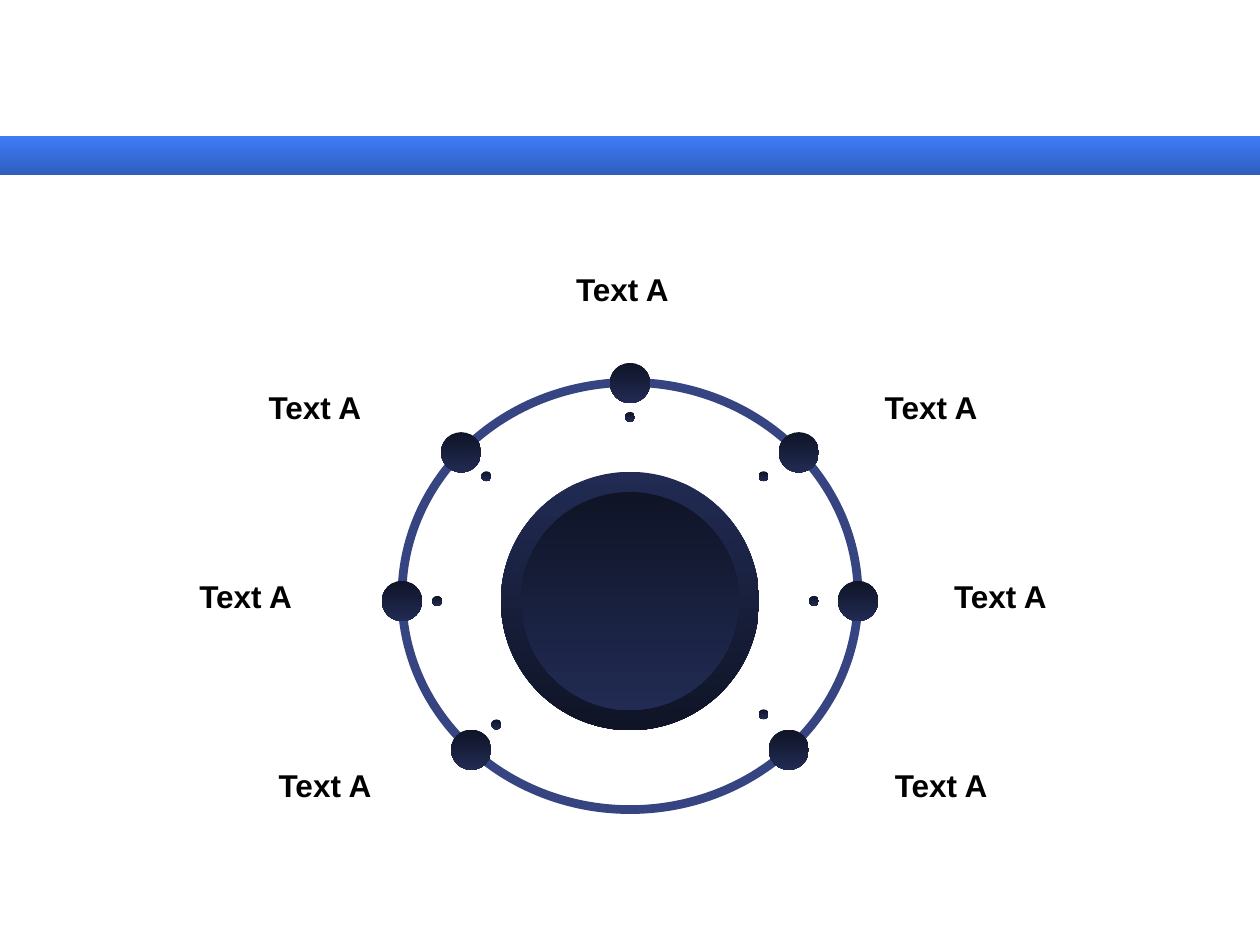
from pptx import Presentation
from pptx.dml.color import RGBColor
from pptx.enum.shapes import MSO_SHAPE as Shape
from pptx.enum.text import MSO_AUTO_SIZE as AutoSize, PP_ALIGN as Align
from pptx.util import Inches, Pt

WHITE = RGBColor(0xFF, 0xFF, 0xFF)
BLACK = RGBColor(0x00, 0x00, 0x00)
BAR_TOP = RGBColor(0x3E, 0x7C, 0xF8)
BAR_BOTTOM = RGBColor(0x2F, 0x5E, 0xBD)
NAVY = RGBColor(0x21, 0x2B, 0x53)
NAVY_DARK = RGBColor(0x0F, 0x14, 0x26)
RING = RGBColor(0x36, 0x44, 0x81)

LABEL_FONT = {"name": "Arial", "size": Pt(18), "bold": True}
LABEL_FRAME = {"word_wrap": False, "auto_size": AutoSize.SHAPE_TO_FIT_TEXT}
LABEL_SIZE = (1.03, 0.4)
NODE_SIZE = 0.32
DOT_SIZE = 0.08

SPOKES = [
    {"node": (0, -1.73), "dot": (0, -1.46), "label": (-0.03, -2.48)},
    {"node": (1.34, -1.18), "dot": (1.06, -0.99), "label": (2.42, -1.54)},
    {"node": (1.81, 0), "dot": (1.46, 0), "label": (2.97, -0.04)},
    {"node": (1.26, 1.18), "dot": (1.06, 0.9), "label": (2.5, 1.46)},
    {"node": (-1.26, 1.18), "dot": (-1.06, 0.98), "label": (-2.39, 1.46)},
    {"node": (-1.81, 0), "dot": (-1.53, 0), "label": (-3.02, -0.04)},
    {"node": (-1.34, -1.18), "dot": (-1.14, -0.99), "label": (-2.47, -1.54)},
]


def apply_format(target, values):
    """Set each named attribute on the target."""
    for name, value in values.items():
        setattr(target, name, value)


def centred_box(center, offset, width, height):
    """Return the box of a given size centred at an offset from a point."""
    return (center[0] + offset[0] - width / 2,
            center[1] + offset[1] - height / 2, width, height)


def add_plain_shape(slide, kind, box):
    """Add a preset shape with no shadow, fill or line."""
    shape = slide.shapes.add_shape(kind, *map(Inches, box))
    shape.shadow.inherit = False
    shape.fill.background()
    shape.line.fill.background()
    return shape


def add_gradient_shape(slide, kind, box, top_color, bottom_color):
    """Add a shape filled from its top colour down to its bottom colour."""
    shape = add_plain_shape(slide, kind, box)
    shape.fill.gradient()
    shape.fill.gradient_angle = 270
    for stop, color, position in zip(shape.fill.gradient_stops,
                                     (top_color, bottom_color), (0, 1)):
        stop.color.rgb = color
        stop.position = position
    return shape


def add_label(slide, box, text):
    """Add a bold centred label."""
    frame = slide.shapes.add_textbox(*map(Inches, box)).text_frame
    apply_format(frame, LABEL_FRAME)
    paragraph = frame.paragraphs[0]
    paragraph.alignment = Align.CENTER
    run = paragraph.add_run()
    run.text = text
    apply_format(run.font, LABEL_FONT)
    run.font.color.rgb = BLACK


def add_backdrop(slide, left, top, width, height):
    """Place the blue bar with the white panel below it."""
    add_gradient_shape(slide, Shape.RECTANGLE, (left, top, width, 0.31),
                       BAR_TOP, BAR_BOTTOM)
    panel = add_plain_shape(slide, Shape.RECTANGLE,
                            (left, top + 0.31, width, height - 0.31))
    panel.fill.solid()
    panel.fill.fore_color.rgb = WHITE


def add_orbit(slide, left, top, width, height):
    """Place the core, ring, nodes, dots and labels around the box centre."""
    center = (left + width / 2, top + height / 2)
    for size, colors in ((2.05, (NAVY, NAVY_DARK)), (1.73, (NAVY_DARK, NAVY))):
        add_gradient_shape(slide, Shape.OVAL,
                           centred_box(center, (0, 0), size, size), *colors)
    ring = add_plain_shape(slide, Shape.OVAL,
                           centred_box(center, (0, -0.04), 3.62, 3.39))
    ring.line.color.rgb = RING
    ring.line.width = Pt(5)
    for spoke in SPOKES:
        for part, size in (("node", NODE_SIZE), ("dot", DOT_SIZE)):
            add_gradient_shape(slide, Shape.OVAL,
                               centred_box(center, spoke[part], size, size),
                               NAVY_DARK, NAVY)
        add_label(slide, centred_box(center, spoke["label"], *LABEL_SIZE),
                  "Text A ")


def main():
    """Build and save the slide."""
    presentation = Presentation()
    presentation.slide_width = Inches(10)
    presentation.slide_height = Inches(7.5)
    slide = presentation.slides.add_slide(presentation.slide_layouts[6])
    add_backdrop(slide, 0, 1.08, 10, 6.42)
    add_orbit(slide, 1.5, 2.04, 7, 5.46)
    presentation.save("out.pptx")


if __name__ == "__main__":
    main()
